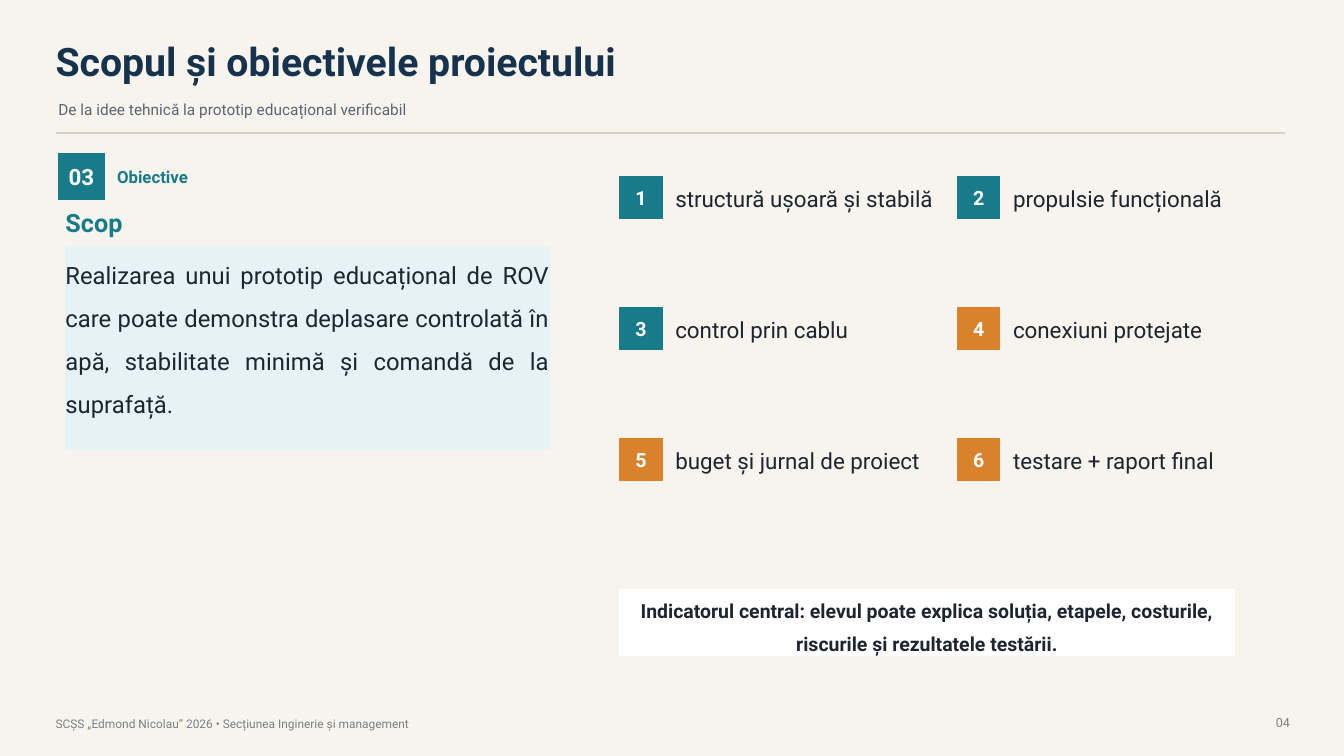
from dataclasses import dataclass

from lxml import etree
from pptx import Presentation
from pptx.dml.color import RGBColor
from pptx.enum.shapes import MSO_CONNECTOR, MSO_SHAPE
from pptx.enum.text import MSO_ANCHOR, PP_ALIGN
from pptx.oxml.ns import qn
from pptx.util import Cm, Pt

LEFT, CENTER, RIGHT, JUSTIFY = (
    PP_ALIGN.LEFT, PP_ALIGN.CENTER, PP_ALIGN.RIGHT, PP_ALIGN.JUSTIFY)
TOP, MIDDLE = MSO_ANCHOR.TOP, MSO_ANCHOR.MIDDLE
RECT, STRAIGHT = MSO_SHAPE.RECTANGLE, MSO_CONNECTOR.STRAIGHT
FONT = "Roboto"
COLORS = {
    "paper": "F7F4EE", "navy": "17324D", "slate": "5B6472", "rule": "D7D1C4",
    "teal": "197A8A", "orange": "D9822B", "ice": "E6F3F6", "ink": "1E2530",
    "white": "FFFFFF", "gray": "7A7F86",
}


@dataclass
class Box:
    left: float
    top: float
    width: float
    height: float


@dataclass
class Style:
    size: float
    color: str
    bold: bool = False
    align: PP_ALIGN = LEFT
    anchor: MSO_ANCHOR = MIDDLE
    spacing: float = 1.0


@dataclass
class Objective:
    text: str
    color: str


def rgb(name: str) -> RGBColor:
    return RGBColor.from_string(COLORS[name])


def place(s, box: Box) -> None:
    s.left, s.top = Cm(box.left), Cm(box.top)
    s.width, s.height = Cm(box.width), Cm(box.height)


def write(s, text: str, style: Style) -> None:
    tf = s.text_frame
    tf.word_wrap = True
    tf.vertical_anchor = style.anchor
    tf.margin_left = tf.margin_right = tf.margin_top = tf.margin_bottom = 0
    p = tf.paragraphs[0]
    p.alignment = style.align
    p.line_spacing = style.spacing
    r = p.add_run()
    r.text = text
    r.font.name = FONT
    r.font.size = Pt(style.size)
    r.font.bold = style.bold
    r.font.color.rgb = rgb(style.color)


def add_label(slide, box: Box, text: str, style: Style) -> None:
    s = slide.shapes.add_textbox(0, 0, 0, 0)
    place(s, box)
    write(s, text, style)


def add_panel(slide, box: Box, fill: str, text: str, style: Style) -> None:
    s = slide.shapes.add_shape(RECT, 0, 0, 0, 0)
    place(s, box)
    s.shadow.inherit = False
    s.fill.solid()
    s.fill.fore_color.rgb = rgb(fill)
    s.line.color.rgb = rgb(fill)
    s.line.width = Pt(0.75)
    write(s, text, style)


def add_header(slide) -> None:
    title = slide.shapes.title
    place(title, Box(1.4, 0.89, 22.1, 1.27))
    write(title, "Scopul și obiectivele proiectului", Style(28, "navy", True))
    add_label(slide, Box(1.47, 2.34, 22.61, 0.81),
              "De la idee tehnică la prototip educațional verificabil",
              Style(11, "slate"))
    rule = slide.shapes.add_connector(
        STRAIGHT, Cm(1.4), Cm(3.35), Cm(32.39), Cm(3.35))
    rule.line.color.rgb = rgb("rule")
    rule.line.width = Pt(1)
    etree.SubElement(rule._element.spPr, qn("a:effectLst"))


def add_purpose(slide) -> None:
    add_panel(slide, Box(1.47, 3.86, 1.17, 1.17), "teal", "03",
              Style(16, "white", True, CENTER))
    add_label(slide, Box(2.95, 4.11, 10.67, 0.71), "Obiective",
              Style(12, "teal", True))
    add_label(slide, Box(1.65, 5.21, 2.79, 0.81), "Scop",
              Style(18, "teal", True))
    add_panel(slide, Box(1.65, 6.22, 12.19, 5.11), "ice",
              "Realizarea unui prototip educațional de ROV care poate "
              "demonstra deplasare controlată în apă, stabilitate minimă "
              "și comandă de la suprafață.",
              Style(17, "ink", align=JUSTIFY, anchor=TOP, spacing=1.5))


def add_objectives(slide, objectives: list[Objective]) -> None:
    badge_style = Style(14, "white", True, CENTER)
    for i, objective in enumerate(objectives):
        row, col = divmod(i, 2)
        left, top = 15.62 + col * 8.51, 4.45 + row * 3.3
        add_panel(slide, Box(left, top, 1.07, 1.07), objective.color,
                  str(i + 1), badge_style)
        add_label(slide, Box(left + 1.4, top + 0.05, 6.6, 1.02),
                  objective.text, Style(16, "ink"))


def main() -> None:
    prs = Presentation()
    prs.slide_width, prs.slide_height = Cm(33.87), Cm(19.05)
    slide = prs.slides.add_slide(prs.slide_layouts.get_by_name("Title Only"))
    slide.background.fill.solid()
    slide.background.fill.fore_color.rgb = rgb("paper")

    # Title, subtitle and rule
    add_header(slide)

    # Left column: section badge and purpose
    add_purpose(slide)

    # Right column: numbered objectives in two columns
    add_objectives(slide, [
        Objective("structură ușoară și stabilă", "teal"),
        Objective("propulsie funcțională", "teal"),
        Objective("control prin cablu", "teal"),
        Objective("conexiuni protejate", "orange"),
        Objective("buget și jurnal de proiect", "orange"),
        Objective("testare + raport final", "orange"),
    ])

    # Central indicator
    add_panel(slide, Box(15.62, 14.86, 15.49, 1.65), "white",
              "Indicatorul central: elevul poate explica soluția, etapele, "
              "costurile, riscurile și rezultatele testării.",
              Style(13.9, "ink", True, CENTER, TOP, 1.4))

    # Footer
    add_label(slide, Box(1.4, 17.98, 21.84, 0.51),
              "SCȘS „Edmond Nicolau” 2026 • Secțiunea Inginerie și management",
              Style(8.5, "gray"))
    add_label(slide, Box(31.24, 17.88, 1.27, 0.64), "04",
              Style(9, "gray", align=RIGHT))

    prs.save("out.pptx")


if __name__ == "__main__":
    main()
